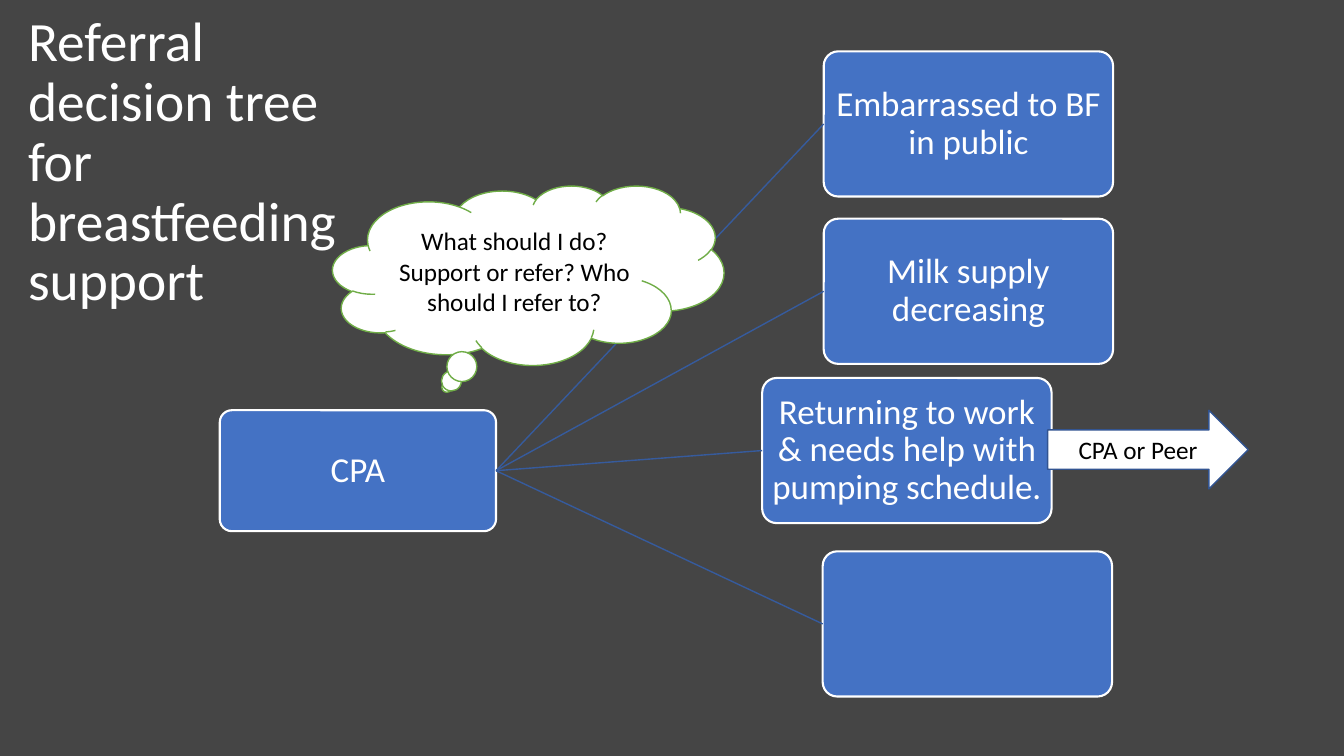
"""Builds the referral decision tree slide for breastfeeding support."""
from pptx import Presentation
from pptx import util as u
from pptx.dml.color import RGBColor
from pptx.enum import shapes, text
from pptx.oxml.ns import qn
from lxml import etree


def rgb(value):
    return RGBColor.from_string(value)


def write(sp, content, size=25, color="FFFFFF", align=text.PP_ALIGN.CENTER,
          spacing=1.0, inset=None, font="Calibri"):
    tf = sp.text_frame
    tf.word_wrap = True
    tf.vertical_anchor = text.MSO_ANCHOR.MIDDLE
    if inset is not None:
        tf.margin_left = tf.margin_right = u.Inches(inset)
        tf.margin_top = tf.margin_bottom = u.Inches(inset)
    for i, line in enumerate(content.split("\n")):
        p = tf.add_paragraph() if i else tf.paragraphs[0]
        p.alignment = align
        p.line_spacing = spacing
        r = p.add_run()
        r.text = line
        r.font.size = u.Pt(size)
        r.font.name = font
        r.font.color.rgb = rgb(color)


class TreeSlide:
    BACK = "454545"
    BLUE = "4472C4"
    LINK = "365B9D"
    WHITE = "FFFFFF"
    BLACK = "000000"

    def __init__(self, prs):
        self.s = prs.slides.add_slide(prs.slide_layouts[6])
        self.s.background.fill.solid()
        self.s.background.fill.fore_color.rgb = rgb(self.BACK)

    def title(self, content, *box):
        sp = self.s.shapes.add_textbox(*map(u.Inches, box))
        write(sp, content, size=39.6, align=text.PP_ALIGN.LEFT, spacing=0.9)

    def shape(self, kind, box, fill, line, width):
        sp = self.s.shapes.add_shape(kind, *map(u.Inches, box))
        sp.shadow.inherit = False
        sp.fill.solid()
        sp.fill.fore_color.rgb = rgb(fill)
        sp.line.color.rgb = rgb(line)
        sp.line.width = u.Pt(width)
        return sp

    def node(self, content, *box):
        sp = self.shape(shapes.MSO_SHAPE.ROUNDED_RECTANGLE, box,
                        self.BLUE, self.WHITE, 1.5)
        sp.adjustments[0] = 0.1
        if content:
            write(sp, content, spacing=0.9, inset=0.02)
        return sp

    def note(self, kind, content, line, *box):
        sp = self.shape(kind, box, self.WHITE, line, 1)
        write(sp, content, size=18, color=self.BLACK)

    def link(self, start, end):
        c = self.s.shapes.add_connector(shapes.MSO_CONNECTOR.STRAIGHT, 0, 0, 0, 0)
        c.begin_connect(start, 3)
        c.end_connect(end, 1)
        c.line.color.rgb = rgb(self.LINK)
        c.line.width = u.Pt(1)
        etree.SubElement(c._element.spPr, qn("a:effectLst"))


def main():
    prs = Presentation()
    prs.slide_width = u.Inches(13.33)
    prs.slide_height = u.Inches(7.5)
    tree = TreeSlide(prs)
    tree.title("Referral decision tree for breastfeeding support",
               0.18, 0.4, 3.63, 2.44)
    cpa = tree.node("CPA", 2.18, 4.07, 2.74, 1.2)
    concerns = [
        ("Embarrassed to BF in public", 8.17, 0.51),
        ("Milk supply decreasing", 8.17, 2.17),
        ("Returning to work & needs help with pumping schedule.", 7.56, 3.75),
        ("", 8.16, 5.47),
    ]
    for content, left, top in concerns:
        tree.link(cpa, tree.node(content, left, top, 2.87, 1.44))
    tree.note(shapes.MSO_SHAPE.CLOUD_CALLOUT,
              "What should I do?\nSupport or refer? Who should I refer to?",
              "70AD47", 3.3, 1.84, 3.88, 1.78)
    tree.note(shapes.MSO_SHAPE.RIGHT_ARROW, "CPA or Peer",
              "325491", 10.39, 4.07, 1.99, 0.78)
    prs.save("out.pptx")


if __name__ == "__main__":
    main()
